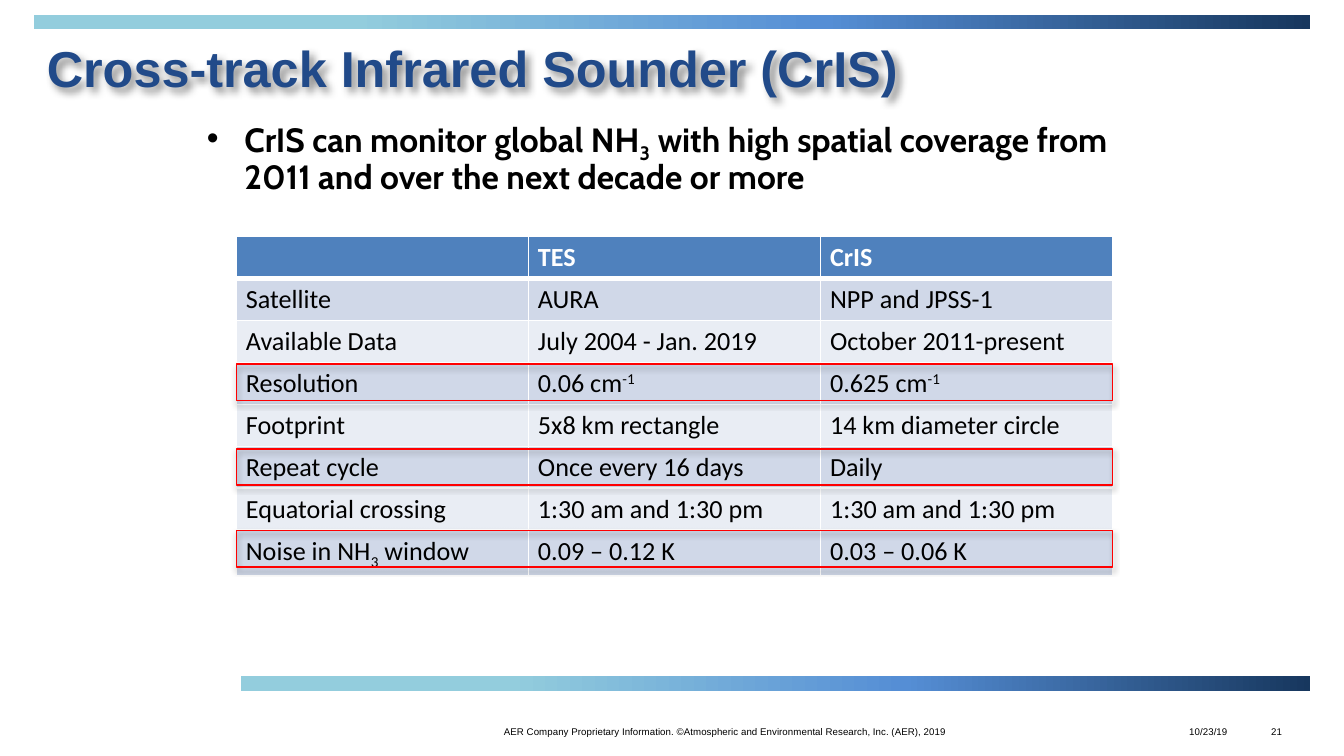
import pptx
import pptx.dml.color
import pptx.enum.shapes
import pptx.enum.text
import pptx.oxml
import pptx.oxml.ns
import pptx.util

Inches = pptx.util.Inches
Pt = pptx.util.Pt
Align = pptx.enum.text.PP_ALIGN

NAMESPACE = pptx.oxml.ns.nsdecls("a")
BAR_STOPS = [(0, "93CDDD"), (25, "93CDDD"), (62, "558ED5"), (100, "17375E")]
HEADER_FILL = "4F81BD"
ROW_FILLS = ["D0D8E8", "E9EDF4"]
TABLE_LEFT, TABLE_TOP, TABLE_WIDTH, TABLE_HEIGHT = 1.76, 1.76, 6.52, 2.5
TABLE_TEXT_SIZE = 14

SUBSCRIPT, SUPERSCRIPT = -25, 30
INVERSE = ("-1", SUPERSCRIPT)
THREE = ("3", SUBSCRIPT)
ROWS = [
    ["", "TES", "CrIS"],
    ["Satellite", "AURA", "NPP and JPSS-1"],
    ["Available Data", "July 2004 - Jan. 2019", "October 2011-present"],
    ["Resolution", ["0.06 cm", INVERSE], ["0.625 cm", INVERSE]],
    ["Footprint", "5x8 km rectangle", "14 km diameter circle"],
    ["Repeat cycle", "Once every 16 days", "Daily"],
    ["Equatorial crossing", "1:30 am and 1:30 pm", "1:30 am and 1:30 pm"],
    [["Noise in NH", THREE, " window"], "0.09 – 0.12 K", "0.03 – 0.06 K"],
]


def rgb(value):
    return pptx.dml.color.RGBColor.from_string(value)


def set_values(target, values):
    for name, value in values.items():
        setattr(target, name, value)


def write_spans(para, content, font, size, color, bold=False):
    spans = [content] if isinstance(content, str) else content
    for item in spans:
        text, baseline = (item, 0) if isinstance(item, str) else item
        span = para.add_run()
        span.text = text
        set_values(span.font, {"name": font, "size": Pt(size), "bold": bold})
        span.font.color.rgb = rgb(color)
        if baseline:
            span._r.get_or_add_rPr().set("baseline", str(baseline * 1000))


def add_text(page, area, content, font, size, color="000000", bold=False, align=Align.LEFT):
    box = page.shapes.add_textbox(*map(Inches, area))
    box.text_frame.word_wrap = True
    para = box.text_frame.paragraphs[0]
    para.alignment = align
    write_spans(para, content, font, size, color, bold)
    return box


def add_bullet(para, indent):
    properties = para._p.get_or_add_pPr()
    properties.set("marL", str(Inches(indent)))
    properties.set("indent", str(-Inches(indent)))
    properties.append(pptx.oxml.parse_xml(f'<a:buFont {NAMESPACE} typeface="Arial"/>'))
    properties.append(pptx.oxml.parse_xml(f'<a:buChar {NAMESPACE} char="•"/>'))


def add_shadow(shape, blur, distance, angle, opacity):
    shape.shadow.inherit = False
    effects = shape._element.spPr.find(pptx.oxml.ns.qn("a:effectLst"))
    effects.append(pptx.oxml.parse_xml(
        f'<a:outerShdw {NAMESPACE} blurRad="{Pt(blur)}" dist="{Pt(distance)}" '
        f'dir="{angle * 60000}" algn="ctr" rotWithShape="0"><a:srgbClr val="000000">'
        f'<a:alpha val="{opacity * 1000}"/></a:srgbClr></a:outerShdw>'))


def add_rectangle(page, area):
    kind = pptx.enum.shapes.MSO_SHAPE.RECTANGLE
    shape = page.shapes.add_shape(kind, *map(Inches, area))
    shape.shadow.inherit = False
    return shape


def add_gradient_bar(page, area):
    bar = add_rectangle(page, area)
    bar.line.fill.background()
    stops = "".join(f'<a:gs pos="{position * 1000}"><a:srgbClr val="{color}"/></a:gs>'
                    for position, color in BAR_STOPS)
    gradient = pptx.oxml.parse_xml(
        f'<a:gradFill {NAMESPACE} rotWithShape="1"><a:gsLst>{stops}</a:gsLst>'
        f'<a:lin ang="0" scaled="0"/></a:gradFill>')
    bar._element.spPr.find(pptx.oxml.ns.qn("a:prstGeom")).addnext(gradient)


def add_highlight(page, top):
    frame = add_rectangle(page, (TABLE_LEFT, top, TABLE_WIDTH, 0.27))
    frame.fill.background()
    frame.line.color.rgb = rgb("FF0000")
    frame.line.width = Pt(0.75)
    add_shadow(frame, 3.1, 1.8, 90, 35)


def set_borders(cell, widths):
    properties = cell._tc.get_or_add_tcPr()
    for position, (side, width) in enumerate(widths.items()):
        properties.insert(position, pptx.oxml.parse_xml(
            f'<a:ln{side} {NAMESPACE} w="{Pt(width)}"><a:solidFill>'
            f'<a:srgbClr val="FFFFFF"/></a:solidFill></a:ln{side}>'))


def fill_cell(cell, content, color, bold):
    para = cell.text_frame.paragraphs[0]
    if content:
        write_spans(para, content, "Calibri", TABLE_TEXT_SIZE, color, bold)
    else:
        para._p.append(pptx.oxml.parse_xml(
            f'<a:endParaRPr {NAMESPACE} sz="{TABLE_TEXT_SIZE * 100}">'
            f'<a:latin typeface="Calibri"/></a:endParaRPr>'))


def add_comparison_table(page):
    area = (TABLE_LEFT, TABLE_TOP, TABLE_WIDTH, TABLE_HEIGHT)
    table = page.shapes.add_table(len(ROWS), len(ROWS[0]), *map(Inches, area)).table
    margins = {"margin_left": Inches(0.07), "margin_right": Inches(0.07),
               "margin_top": Inches(0.04), "margin_bottom": Inches(0.03)}
    for row, contents in enumerate(ROWS):
        header = row == 0
        fill = HEADER_FILL if header else ROW_FILLS[(row - 1) % 2]
        color = "FFFFFF" if header else "000000"
        top, bottom = 3 if row == 1 else 1, 3 if header else 1
        for column, content in enumerate(contents):
            cell = table.cell(row, column)
            set_values(cell, margins)
            cell.fill.solid()
            cell.fill.fore_color.rgb = rgb(fill)
            set_borders(cell, {"L": 1, "R": 1, "T": top, "B": bottom})
            fill_cell(cell, content, color, header)


def main():
    deck = pptx.Presentation()
    width = Inches(10)
    set_values(deck, {"slide_width": width, "slide_height": width * 9 // 16})
    page = deck.slides.add_slide(deck.slide_layouts[6])

    add_gradient_bar(page, (0.25, 0.11, 9.5, 0.11))
    add_gradient_bar(page, (1.79, 5.03, 7.96, 0.11))

    footer = "AER Company Proprietary Information. ©Atmospheric and Environmental Research, Inc. (AER), 2019 "
    for left, width, text, align in [(2.54, 5.74, footer, Align.CENTER),
                                     (9.36, 1.22, "21", Align.LEFT),
                                     (8.75, 1.09, "10/23/19", Align.LEFT)]:
        add_text(page, (left, 5.35, width, 0.19), text, "Arial", 5.25, align=align)

    title = add_text(page, (0.25, 0.23, 9.5, 0.66), "Cross-track Infrared Sounder (CrIS)",
                     "Arial", 27, "214A89", True)
    title.fill.background()
    add_shadow(title, 4, 3, 45, 45)

    add_comparison_table(page)
    for top in (2.71, 3.34, 3.95):
        add_highlight(page, top)

    summary = ["CrIS can monitor global NH", THREE,
               " with high spatial coverage from 2011 and over the next decade or more"]
    box = add_text(page, (1.44, 0.84, 7.12, 0.65), summary, "Cabin", 18, bold=True)
    para = box.text_frame.paragraphs[0]
    add_bullet(para, 0.28)
    para.line_spacing = 0.9

    deck.save("out.pptx")


if __name__ == "__main__":
    main()
